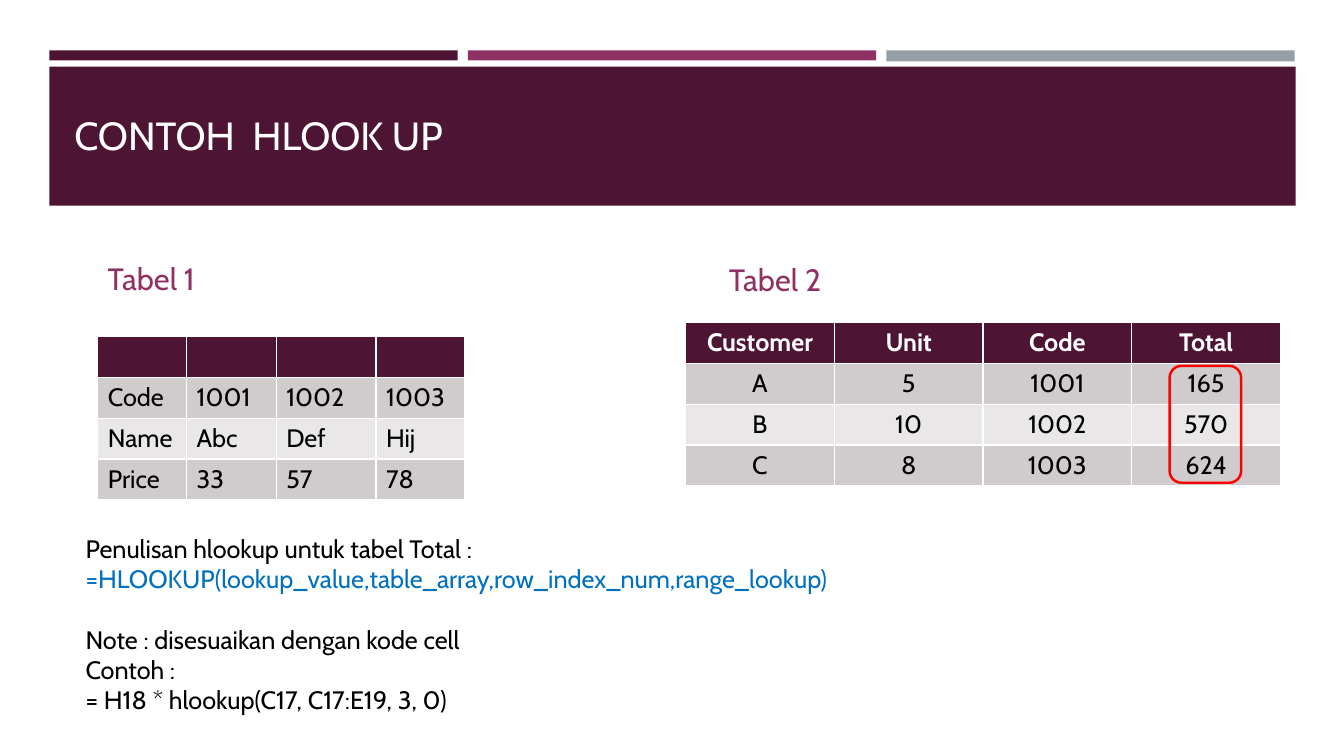
"""Build the HLOOKUP example slide with its two tables."""
from dataclasses import dataclass

from pptx import Presentation
from pptx.dml.color import RGBColor
from pptx.enum.shapes import MSO_SHAPE
from pptx.enum.text import MSO_ANCHOR, PP_ALIGN
from pptx.shapes.autoshape import Shape
from pptx.slide import Slide
from pptx.util import Inches, Pt

FONT = "Cabin"
PLUM = RGBColor(0x4D, 0x14, 0x34)
MAGENTA = RGBColor(0x90, 0x31, 0x63)
SLATE = RGBColor(0x96, 0x9F, 0xA7)
BAND_DARK = RGBColor(0xD0, 0xCC, 0xCE)
BAND_LIGHT = RGBColor(0xE9, 0xE7, 0xE8)
WHITE = RGBColor(0xFF, 0xFF, 0xFF)
BLACK = RGBColor(0x00, 0x00, 0x00)
BLUE = RGBColor(0x00, 0x70, 0xC0)
RED = RGBColor(0xFF, 0x00, 0x00)


@dataclass(frozen=True)
class Box:
    left: float
    top: float
    width: float
    height: float

    def emu(self) -> tuple[int, int, int, int]:
        return (Inches(self.left), Inches(self.top),
                Inches(self.width), Inches(self.height))


@dataclass(frozen=True)
class Line:
    text: str
    color: RGBColor = BLACK
    size: float = 18
    before: float = 0


@dataclass(frozen=True)
class TextBlock:
    box: Box
    lines: list[Line]
    anchor: MSO_ANCHOR = MSO_ANCHOR.MIDDLE


@dataclass(frozen=True)
class Grid:
    left: float
    top: float
    col_widths: list[float]
    rows: list[list[str]]
    align: PP_ALIGN
    row_height: float = 0.405


BARS = [
    (Box(0.49, 0.5, 4.05, 0.1), PLUM),
    (Box(4.64, 0.5, 4.05, 0.1), MAGENTA),
    (Box(8.79, 0.5, 4.05, 0.11), SLATE),
    (Box(0.49, 0.66, 12.36, 1.38), PLUM),
]

TEXTS = [
    TextBlock(Box(0.64, 0.8, 12.06, 1.08), [Line("CONTOH  HLOOK UP", WHITE, 28)]),
    TextBlock(Box(0.97, 2.46, 5.56, 0.59), [Line("Tabel 1", MAGENTA, 22)]),
    TextBlock(Box(7.13, 2.46, 5.56, 0.61), [Line("Tabel 2", MAGENTA, 22)]),
    TextBlock(Box(0.75, 5.24, 8.56, 1.92), [
        Line("Penulisan hlookup untuk tabel Total :"),
        Line("=HLOOKUP(lookup_value,table_array,row_index_num,range_lookup)", BLUE),
        Line("Note : disesuaikan dengan kode cell", before=21.6),
        Line("Contoh :"),
        Line("= H18 * hlookup(C17, C17:E19, 3, 0)"),
    ], MSO_ANCHOR.TOP),
]

PRICES = Grid(0.97, 3.34, [0.88, 0.89, 0.99, 0.88], [
    ["", "", "", ""],
    ["Code", "1001", "1002", "1003"],
    ["Name", "Abc", "Def", "Hij"],
    ["Price", "33", "57", "78"],
], PP_ALIGN.LEFT)

ORDERS = Grid(6.8, 3.2, [1.475] * 4, [
    ["Customer", "Unit", "Code", "Total"],
    ["A", "5", "1001", "165"],
    ["B", "10", "1002", "570"],
    ["C", "8", "1003", "624"],
], PP_ALIGN.CENTER)

TOTALS_FRAME = Box(11.6, 3.63, 0.71, 1.16)


def add_plain_shape(s: Slide, kind: MSO_SHAPE, box: Box) -> Shape:
    sp = s.shapes.add_shape(kind, *box.emu())
    sp.shadow.inherit = False
    return sp


def add_bar(s: Slide, box: Box, color: RGBColor) -> None:
    sp = add_plain_shape(s, MSO_SHAPE.RECTANGLE, box)
    sp.fill.solid()
    sp.fill.fore_color.rgb = color
    sp.line.fill.background()


def add_text(s: Slide, block: TextBlock) -> None:
    tf = s.shapes.add_textbox(*block.box.emu()).text_frame
    tf.word_wrap = True
    tf.vertical_anchor = block.anchor
    for i, line in enumerate(block.lines):
        p = tf.add_paragraph() if i else tf.paragraphs[0]
        p.text = line.text
        if line.before:
            p.space_before = Pt(line.before)
        p.font.name = FONT
        p.font.size = Pt(line.size)
        p.font.color.rgb = line.color


def add_grid(s: Slide, grid: Grid) -> None:
    box = Box(grid.left, grid.top, sum(grid.col_widths),
              grid.row_height * len(grid.rows))
    table = s.shapes.add_table(len(grid.rows), len(grid.col_widths), *box.emu()).table
    for column, width in zip(table.columns, grid.col_widths):
        column.width = Inches(width)
    for i, values in enumerate(grid.rows):
        header = i == 0
        fill = PLUM if header else BAND_DARK if i % 2 else BAND_LIGHT
        for j, value in enumerate(values):
            cell = table.cell(i, j)
            cell.fill.solid()
            cell.fill.fore_color.rgb = fill
            p = cell.text_frame.paragraphs[0]
            p.text = value
            p.alignment = grid.align
            p.font.name = FONT
            p.font.size = Pt(18)
            p.font.bold = header
            p.font.color.rgb = WHITE if header else BLACK


def main() -> None:
    prs = Presentation()
    prs.slide_width, prs.slide_height = Inches(13.33), Inches(7.5)
    s = prs.slides.add_slide(prs.slide_layouts[6])
    for box, color in BARS:
        add_bar(s, box, color)
    for block in TEXTS:
        add_text(s, block)
    for grid in (PRICES, ORDERS):
        add_grid(s, grid)
    frame = add_plain_shape(s, MSO_SHAPE.ROUNDED_RECTANGLE, TOTALS_FRAME)
    frame.fill.background()
    frame.line.color.rgb = RED
    frame.line.width = Pt(1.75)
    prs.save("out.pptx")


if __name__ == "__main__":
    main()
